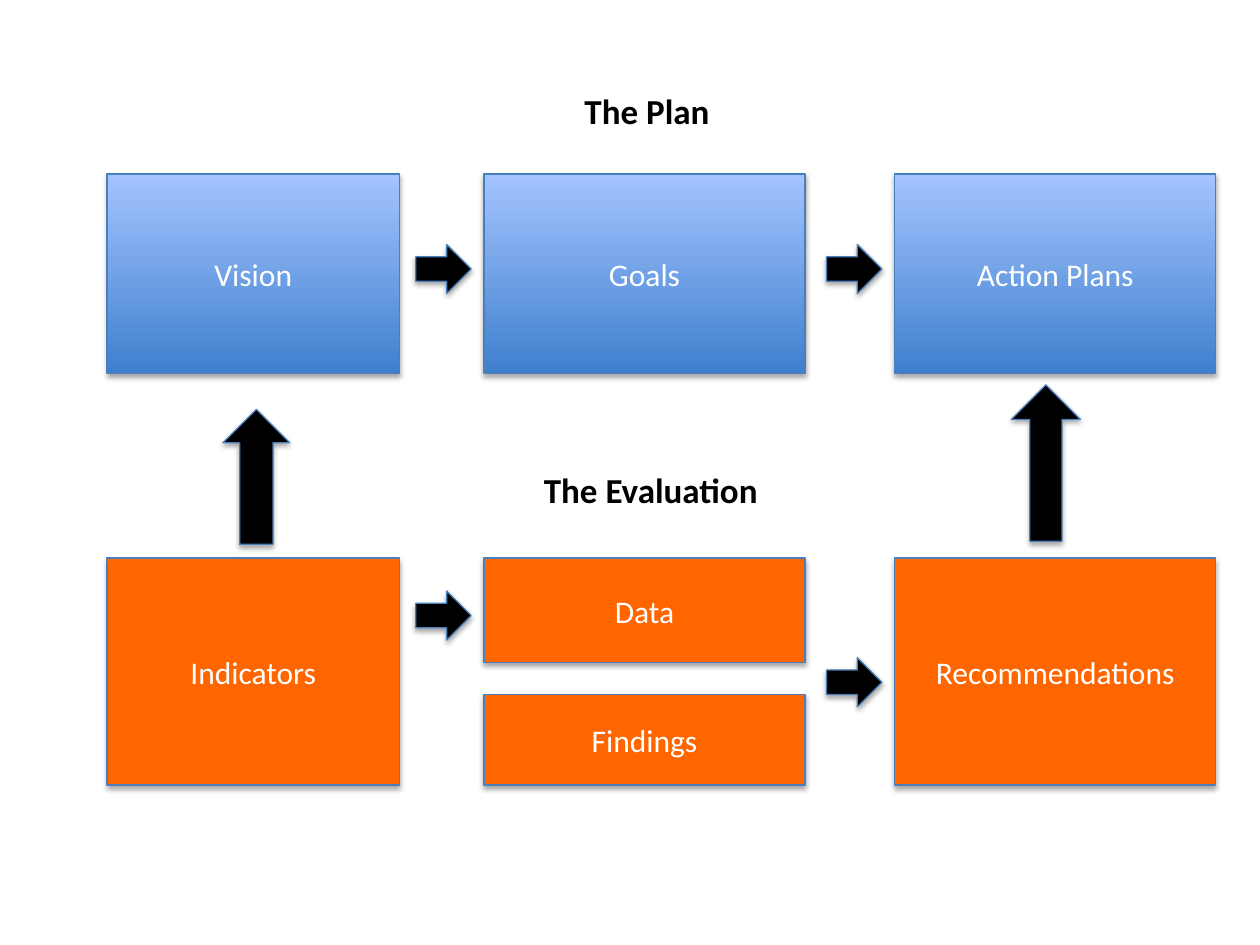
from lxml import etree
from pptx import Presentation
from pptx.dml.color import RGBColor
from pptx.enum import shapes, text
from pptx.oxml import ns
from pptx.util import Inches, Pt

WHITE = RGBColor(0xFF, 0xFF, 0xFF)
BLACK = RGBColor(0, 0, 0)
ORANGE = RGBColor(0xFF, 0x66, 0x00)
BLUE_DARK = RGBColor(0x3F, 0x80, 0xCE)
BLUE_LIGHT = RGBColor(0xA4, 0xC4, 0xFF)
OUTLINE = RGBColor(0x4B, 0x7E, 0xBC)

RECTANGLE = shapes.MSO_SHAPE.RECTANGLE
RIGHT_ARROW = shapes.MSO_SHAPE.RIGHT_ARROW
UP_ARROW = shapes.MSO_SHAPE.UP_ARROW
LEFT_ARROW = shapes.MSO_SHAPE.LEFT_ARROW

COLUMNS = [(0.85, 2.32), (3.84, 2.55), (7.1, 2.55)]
GAP_ARROWS = [3.3, 6.56]


def write(shape, words, size, color, bold=False):
    """Put one centred line of text in a shape."""
    frame = shape.text_frame
    frame.word_wrap = True
    para = frame.paragraphs[0]
    para.alignment = text.PP_ALIGN.CENTER
    span = para.add_run()
    span.text = words
    formats = {"name": "Calibri", "size": Pt(size), "bold": bold}
    for name, value in formats.items():
        setattr(span.font, name, value)
    span.font.color.rgb = color


def add_shadow(shape):
    """Give a shape a soft shadow that falls straight down."""
    shape.shadow.inherit = False
    effects = shape._element.spPr.find(ns.qn("a:effectLst"))
    shadow = etree.SubElement(effects, ns.qn("a:outerShdw"), blurRad=str(Pt(3.1)),
                              dist=str(Pt(1.8)), dir="5400000", rotWithShape="0")
    color = etree.SubElement(shadow, ns.qn("a:srgbClr"), val=str(BLACK))
    etree.SubElement(color, ns.qn("a:alpha"), val="35000")


def add_block(page, kind, box, color):
    """Add an outlined, shadowed shape; a pair of colours makes a gradient."""
    shape = page.shapes.add_shape(kind, *map(Inches, box))
    if isinstance(color, list):
        shape.fill.gradient()
        shape.fill.gradient_angle = 90
        for stop, shade in zip(shape.fill.gradient_stops, color):
            stop.color.rgb = shade
    else:
        shape.fill.solid()
        shape.fill.fore_color.rgb = color
    shape.line.color.rgb = OUTLINE
    shape.line.width = Pt(0.75)
    add_shadow(shape)
    return shape


def add_card(page, words, box, color):
    """Add a labelled rectangle."""
    card = add_block(page, RECTANGLE, box, color)
    card.text_frame.vertical_anchor = text.MSO_ANCHOR.MIDDLE
    write(card, words, 18, WHITE)


def add_heading(page, words, left, top):
    """Add a bold heading over a row."""
    heading = page.shapes.add_textbox(*map(Inches, (left, top, 3.39, 0.44)))
    write(heading, words, 20, BLACK, bold=True)


def add_step_arrow(page, left, top):
    """Add a small arrow between two columns."""
    add_block(page, RIGHT_ARROW, (left, top, 0.44, 0.39), BLACK)


def add_plan(page, top, height):
    """Place the plan row: three cards joined by arrows."""
    add_heading(page, "The Plan", 3.44, 0.66)
    for words, (left, width) in zip(["Vision", "Goals", "Action Plans"], COLUMNS):
        add_card(page, words, (left, top, width, height), [BLUE_DARK, BLUE_LIGHT])
    for left in GAP_ARROWS:
        add_step_arrow(page, left, top + 0.56)


def add_evaluation(page, top, height):
    """Place the evaluation row, whose middle column is split in two."""
    add_heading(page, "The Evaluation", 3.47, 3.67)
    first, middle, last = COLUMNS
    cards = [
        ("Indicators", first, 0, height),
        ("Data", middle, 0, 0.83),
        ("Findings", middle, 1.08, height - 1.08),
        ("Recommendations", last, 0, height),
    ]
    for words, (left, width), offset, tall in cards:
        add_card(page, words, (left, top + offset, width, tall), ORANGE)
    for left, offset in zip(GAP_ARROWS, [0.26, 0.79]):
        add_step_arrow(page, left, top + offset)


def add_feedback(page):
    """Place the two arrows that lead from the evaluation up to the plan."""
    add_block(page, UP_ARROW, (1.77, 3.25, 0.53, 1.07), BLACK)
    arrow = add_block(page, LEFT_ARROW, (7.68, 3.4, 1.24, 0.55), BLACK)
    arrow.rotation = 90
    arrow.adjustments[0] = 0.465


def main():
    """Build the slide and save it."""
    deck = Presentation()
    deck.slide_width, deck.slide_height = Inches(10), Inches(7.5)
    page = deck.slides.add_slide(deck.slide_layouts[6])
    add_plan(page, 1.38, 1.58)
    add_evaluation(page, 4.43, 1.8)
    add_feedback(page)
    deck.save("out.pptx")


if __name__ == "__main__":
    main()
